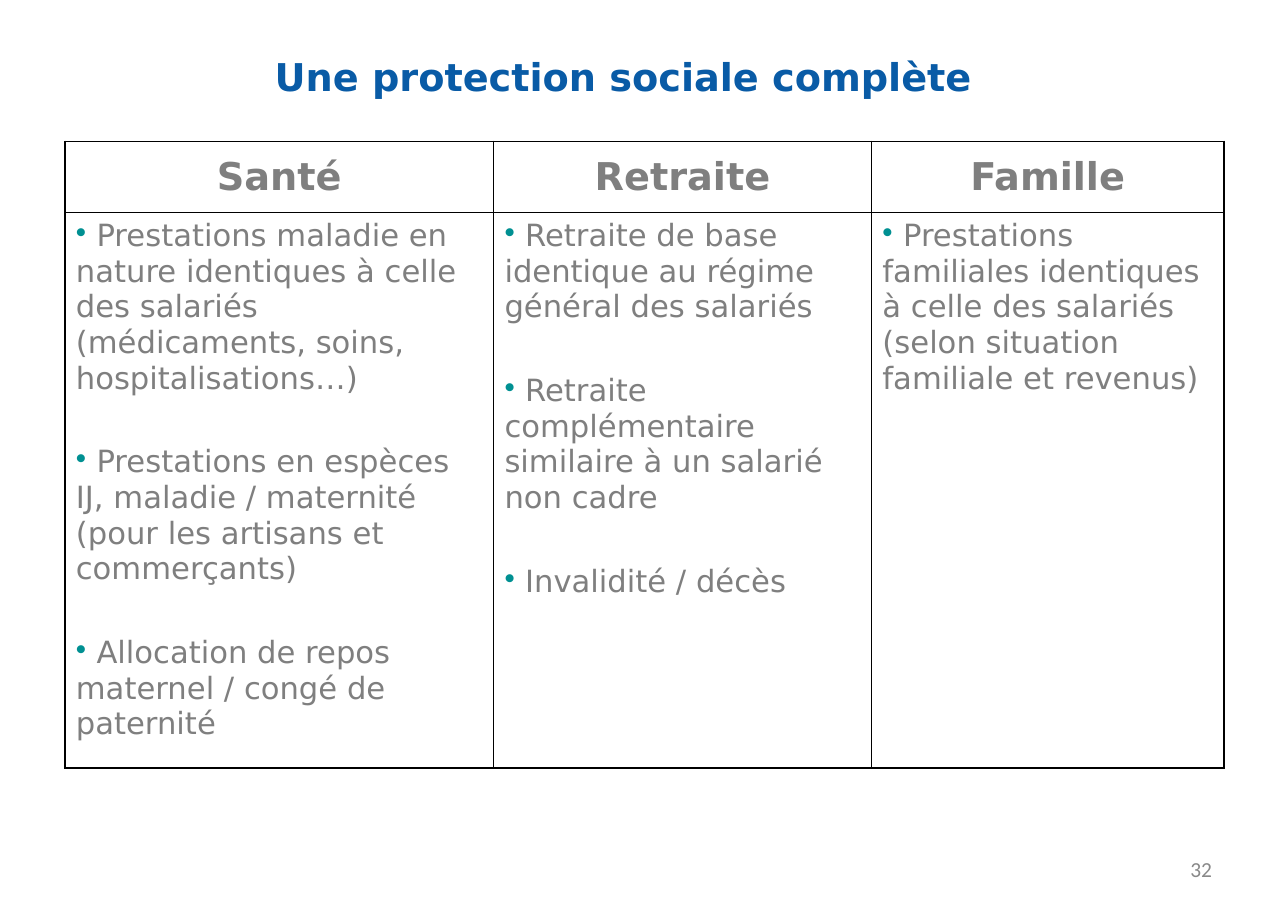
import pptx
import pptx.dml.color
import pptx.enum.text
import pptx.oxml.ns
import pptx.util
from dataclasses import dataclass
from lxml import etree

Pt = pptx.util.Pt
Align = pptx.enum.text.PP_ALIGN
Anchor = pptx.enum.text.MSO_ANCHOR
qn = pptx.oxml.ns.qn


@dataclass
class Theme:
    font: str = "DejaVu Sans"
    number_font: str = "Calibri"
    title: str = "095BA6"
    text: str = "7F7F7F"
    bullet: str = "009092"
    number: str = "898989"
    border: str = "000000"
    cell: str = "FFFFFF"
    heading_size: int = 25
    body_size: int = 20
    number_size: int = 14


theme = Theme()


def add_span(para, text, size, color, font=theme.font, bold=False):
    span = para.add_run()
    span.text = text
    span.font.name = font
    span.font.size = Pt(size)
    span.font.bold = bold
    span.font.color.rgb = pptx.dml.color.RGBColor.from_string(color)


def style_cell(cell):
    properties = cell._tc.get_or_add_tcPr()
    for side in ("lnL", "lnR", "lnT", "lnB"):
        line = etree.SubElement(properties, qn(f"a:{side}"), w=str(Pt(1)))
        fill = etree.SubElement(line, qn("a:solidFill"))
        etree.SubElement(fill, qn("a:srgbClr"), val=theme.border)
    cell.fill.solid()
    cell.fill.fore_color.rgb = pptx.dml.color.RGBColor.from_string(theme.cell)
    cell.margin_left = cell.margin_right = Pt(7.2)
    cell.margin_top = cell.margin_bottom = Pt(3.6)


deck = pptx.Presentation()
deck.slide_width = Pt(841.68)
deck.slide_height = Pt(595.44)
page = deck.slides.add_slide(deck.slide_layouts[6])

labels = [
    ("32", (603.4, 552.2, 196.6, 31.7), Align.RIGHT,
     (theme.number_size, theme.number, theme.number_font, False)),
    ("Une protection sociale complète", (0, 20.9, 814.3, 58.3), Align.CENTER,
     (theme.heading_size, theme.title, theme.font, True)),
]
for text, place, alignment, style in labels:
    box = page.shapes.add_textbox(*map(Pt, place))
    frame = box.text_frame
    frame.word_wrap = True
    frame.vertical_anchor = Anchor.MIDDLE
    frame.margin_left = frame.margin_right = Pt(7.9)
    frame.margin_top = frame.margin_bottom = Pt(4)
    para = frame.paragraphs[0]
    para.alignment = alignment
    add_span(para, text, *style)

benefits = [
    ("Santé", 280.1, [
        "Prestations maladie en nature identiques à celle des salariés (médicaments, soins, hospitalisations…)",
        "Prestations en espèces IJ, maladie / maternité (pour les artisans et commerçants)",
        "Allocation de repos maternel / congé de paternité",
    ]),
    ("Retraite", 247, [
        "Retraite de base identique au régime général des salariés",
        "Retraite complémentaire similaire à un salarié non cadre",
        "Invalidité / décès",
    ]),
    ("Famille", 230.4, [
        "Prestations familiales identiques à celle des salariés (selon situation familiale et revenus)",
    ]),
]
row_heights = (46.8, 362.9)
table_width = sum(width for _, width, _ in benefits)
table = page.shapes.add_table(
    2, len(benefits), Pt(42.4), Pt(92.3), Pt(table_width), Pt(sum(row_heights))
).table
table.first_row = False
table.horz_banding = False
for row, height in zip(table.rows, row_heights):
    row.height = Pt(height)

for index, (heading, width, items) in enumerate(benefits):
    table.columns[index].width = Pt(width)
    header = table.cell(0, index)
    body = table.cell(1, index)
    style_cell(header)
    style_cell(body)
    header.vertical_anchor = Anchor.MIDDLE
    para = header.text_frame.paragraphs[0]
    para.alignment = Align.CENTER
    add_span(para, heading, theme.heading_size, theme.text, bold=True)

    for position, item in enumerate(items):
        frame = body.text_frame
        para = frame.add_paragraph() if position else frame.paragraphs[0]
        properties = para._p.get_or_add_pPr()
        color = etree.SubElement(properties, qn("a:buClr"))
        etree.SubElement(color, qn("a:srgbClr"), val=theme.bullet)
        etree.SubElement(properties, qn("a:buChar"), char="•")
        if position:
            para.space_before = Pt(31.5)
        add_span(para, f" {item}", theme.body_size, theme.text)

deck.save("out.pptx")
